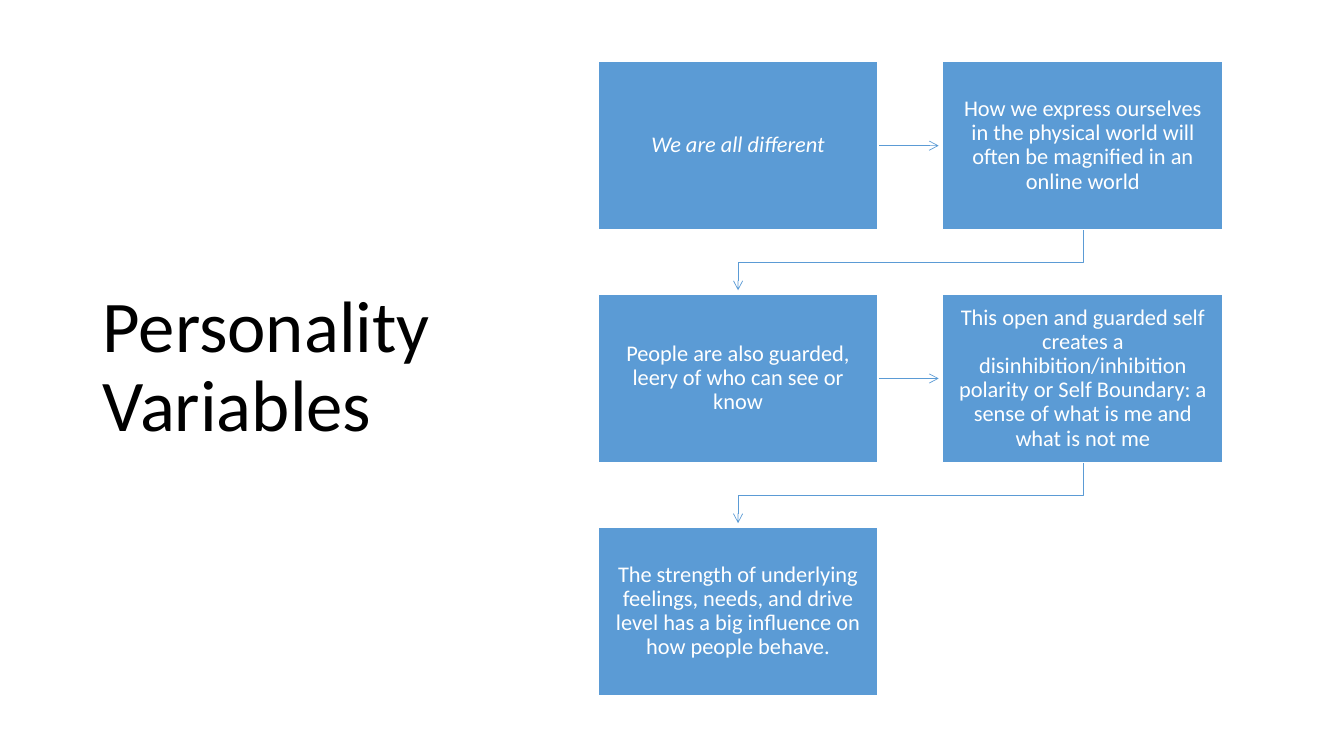
from lxml import etree
from pptx import Presentation
from pptx.dml.color import RGBColor
from pptx.enum.shapes import MSO_CONNECTOR, MSO_SHAPE
from pptx.enum.text import MSO_ANCHOR, PP_ALIGN
from pptx.oxml.ns import qn
from pptx.util import Inches, Pt

STRAIGHT = MSO_CONNECTOR.STRAIGHT
RECTANGLE = MSO_SHAPE.RECTANGLE
MIDDLE = MSO_ANCHOR.MIDDLE
LEFT, CENTER = PP_ALIGN.LEFT, PP_ALIGN.CENTER
TITLE_ONLY = 5

COLORS = {"step": "5B9BD5", "paper": "FFFFFF", "ink": "000000"}
STEPS = [
    "We are all different",
    "How we express ourselves in the physical world will often be magnified in an online world",
    "People are also guarded, leery of who can see or know",
    "This open and guarded self creates a disinhibition/inhibition polarity or Self Boundary: "
    "a sense of what is me and what is not me",
    "The strength of underlying feelings, needs, and drive level has a big influence on how people behave.",
]


class FlowSlide:
    font = "Calibri"
    columns = 2
    left, top = 5.93, 0.61
    width, height = 2.78, 1.67
    column_step, row_step = 3.42, 2.31
    arrow_gap = 0.04

    def __init__(self, deck):
        self.page = deck.slides.add_slide(deck.slide_layouts[TITLE_ONLY])

    def color(self, name):
        return RGBColor.from_string(COLORS[name])

    def corner(self, index):
        row, column = divmod(index, self.columns)
        return self.left + column * self.column_step, self.top + row * self.row_step

    def set_text(self, box, text, size, color, align, italic=None):
        box.text_frame.word_wrap = True
        box.text_frame.vertical_anchor = MIDDLE
        para = box.text_frame.paragraphs[0]
        para.text = text
        para.alignment = align
        para.line_spacing = 0.9
        para.font.name = self.font
        para.font.size = Pt(size)
        para.font.italic = italic
        para.font.color.rgb = self.color(color)
        return para

    def title(self, text):
        box = self.page.shapes.title
        box.left, box.top = Inches(0.92), Inches(0.61)
        box.width, box.height = Inches(5.32), Inches(6.09)
        self.set_text(box, text, 52, "ink", LEFT)

    def step(self, index, text):
        x, y = self.corner(index)
        box = self.page.shapes.add_shape(
            RECTANGLE, Inches(x), Inches(y), Inches(self.width), Inches(self.height))
        box.shadow.inherit = False
        box.fill.solid()
        box.fill.fore_color.rgb = self.color("step")
        box.line.color.rgb = self.color("paper")
        box.line.width = Pt(1)
        frame = box.text_frame
        frame.margin_left = frame.margin_right = Inches(0.14)
        frame.margin_top = frame.margin_bottom = Inches(0.14)
        para = self.set_text(box, text, 16, "paper", CENTER, italic=index == 0)
        para.space_after = Pt(5.6)

    def arrow(self, index):
        x, y = self.corner(index)
        next_x, next_y = self.corner(index + 1)
        if y == next_y:
            middle = Inches(y + self.height / 2)
            line = self.page.shapes.add_connector(
                STRAIGHT, Inches(x + self.width), middle, Inches(next_x - self.arrow_gap), middle)
            self.style_arrow(line)
            etree.SubElement(line._element.spPr, qn("a:effectLst"))
        else:
            start, end = x + self.width / 2, next_x + self.width / 2
            bottom = y + self.height
            turn = (bottom + next_y) / 2
            builder = self.page.shapes.build_freeform(Inches(start), Inches(bottom))
            corners = [(start, turn), (end, turn), (end, next_y - self.arrow_gap)]
            builder.add_line_segments([(Inches(a), Inches(b)) for a, b in corners], close=False)
            line = builder.convert_to_shape()
            line.fill.background()
            line.shadow.inherit = False
            self.style_arrow(line)

    def style_arrow(self, line):
        line.line.color.rgb = self.color("step")
        line.line.width = Pt(0.5)
        outline = line._element.spPr.find(qn("a:ln"))
        etree.SubElement(outline, qn("a:tailEnd"), type="arrow")


def main():
    deck = Presentation()
    deck.slide_width, deck.slide_height = Inches(13.33), Inches(7.5)
    slide = FlowSlide(deck)
    slide.title("Personality Variables")
    for index, text in enumerate(STEPS):
        if index + 1 < len(STEPS):
            slide.arrow(index)
        slide.step(index, text)
    deck.save("out.pptx")


if __name__ == "__main__":
    main()
